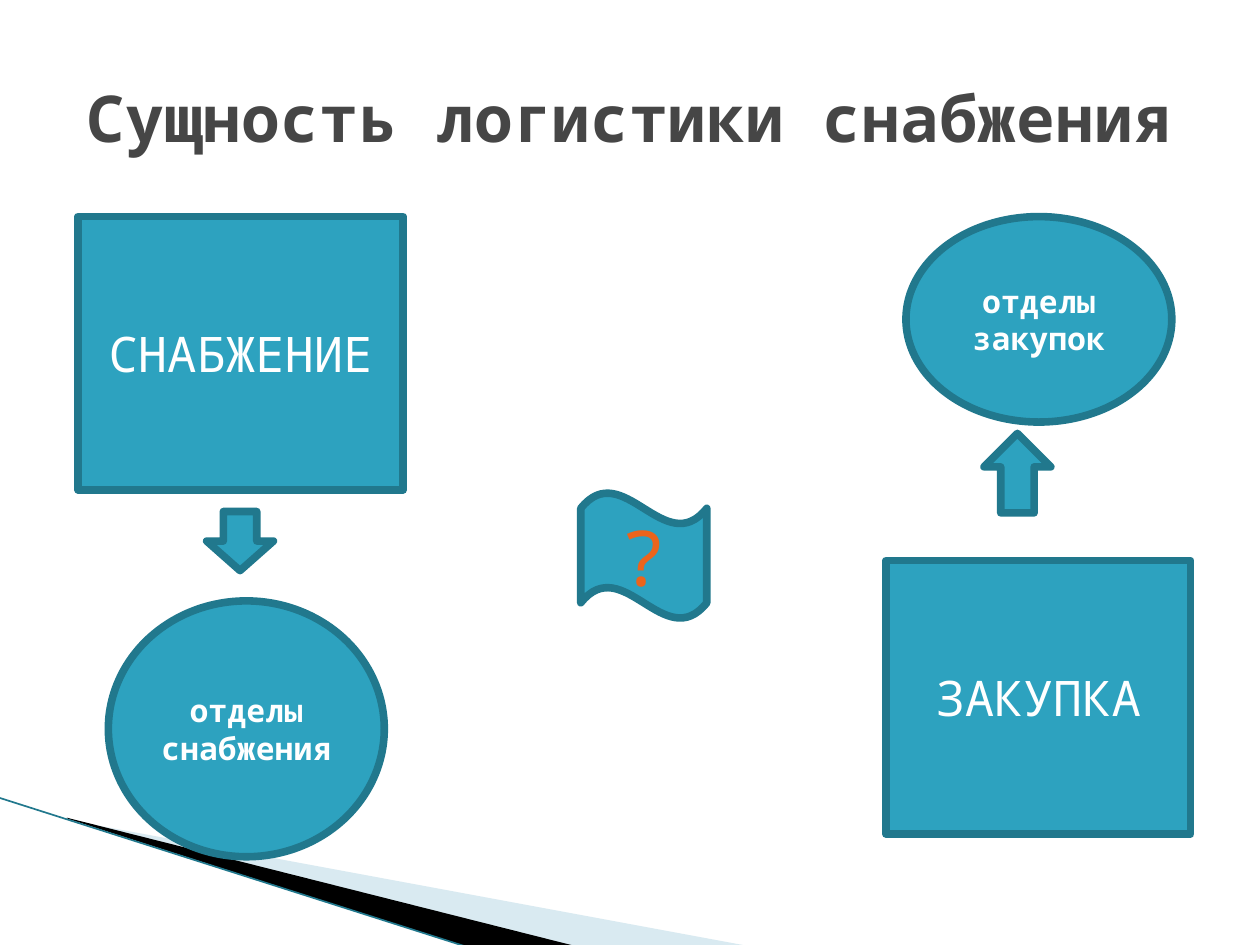
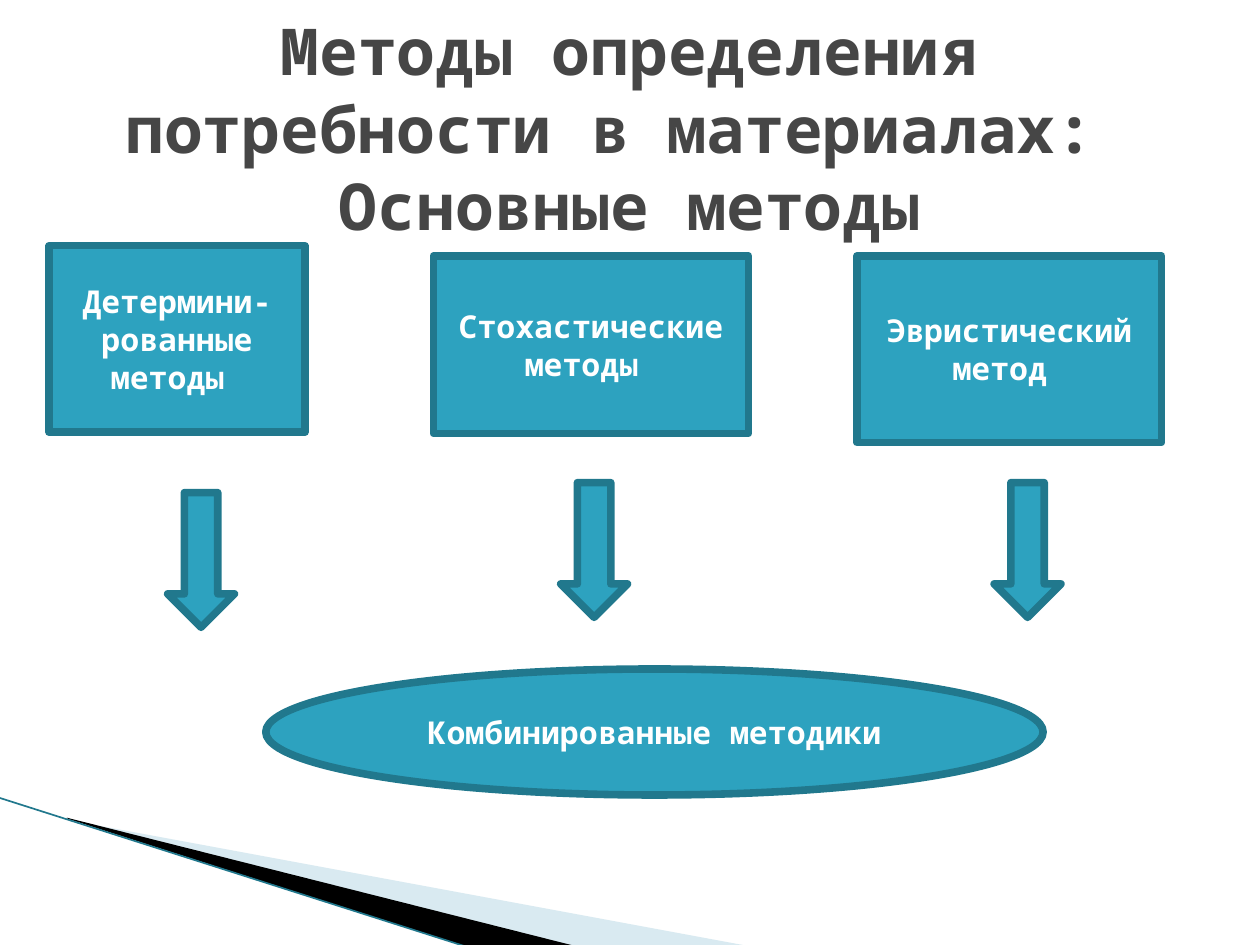
"""Build two slides on supply logistics and methods of planning material needs."""
from lxml.etree import SubElement
from pptx import Presentation
from pptx.dml.color import RGBColor
from pptx.enum.shapes import MSO_CONNECTOR, MSO_SHAPE
from pptx.enum.text import MSO_ANCHOR, PP_ALIGN
from pptx.oxml.ns import qn
from pptx.util import Pt

FONT = "Noto Sans Mono"
TEAL = RGBColor(0x2D, 0xA2, 0xBF)
DARK_TEAL = RGBColor(0x21, 0x78, 0x8D)
PALE_BLUE = RGBColor(0xA0, 0xCB, 0xDC)
BLACK = RGBColor(0, 0, 0)
WHITE = RGBColor(0xFF, 0xFF, 0xFF)
ORANGE = RGBColor(0xEB, 0x64, 0x1B)
GREY = RGBColor(0x46, 0x46, 0x46)

WEDGES = [
    (PALE_BLUE, [(39.6, 468.7), (428.4, 540.7), (328.3, 540.7), (39.6, 468)]),
    (BLACK, [(38.2, 467.3), (329, 540.7), (267.8, 541.4), (38.9, 468)]),
]


def write(shape, text, size, color, bold):
    frame = shape.text_frame
    frame.word_wrap = True
    frame.vertical_anchor = MSO_ANCHOR.MIDDLE
    frame.margin_left = frame.margin_right = Pt(6)
    frame.text = text
    paragraph = frame.paragraphs[0]
    paragraph.alignment = PP_ALIGN.CENTER
    paragraph.font.name = FONT
    paragraph.font.size = Pt(size)
    paragraph.font.bold = bold
    paragraph.font.color.rgb = color


def add_figure(slide, kind, box, text="", size=18, color=WHITE, bold=True):
    figure = slide.shapes.add_shape(kind, *map(Pt, box))
    figure.shadow.inherit = False
    figure.fill.solid()
    figure.fill.fore_color.rgb = TEAL
    figure.line.color.rgb = DARK_TEAL
    figure.line.width = Pt(4.33)
    if text:
        write(figure, text, size, color, bold)


prs = Presentation()
prs.slide_width, prs.slide_height = Pt(720), Pt(540)

titles = [
    ("Сущность логистики снабжения", (36, 21.6, 648, 90)),
    ("Методы определения потребности в материалах: \vОсновные методы", (36, 16.6, 648, 112.3)),
]
slides = []
for title, box in titles:
    slide = prs.slides.add_slide(prs.slide_layouts[6])
    slides.append(slide)
    for color, points in WEDGES:
        corners = [(Pt(x), Pt(y)) for x, y in points]
        builder = slide.shapes.build_freeform(*corners[0])
        builder.add_line_segments(corners[1:])
        wedge = builder.convert_to_shape()
        wedge.shadow.inherit = False
        wedge.fill.solid()
        wedge.fill.fore_color.rgb = color
        wedge.line.fill.background()
        if color == PALE_BLUE:
            tint = wedge.fill._xPr.find(qn("a:solidFill"))[0]
            SubElement(tint, qn("a:alpha"), val="40000")
    edge = slide.shapes.add_connector(
        MSO_CONNECTOR.STRAIGHT, Pt(-0.7), Pt(455.8), Pt(267.8), Pt(541.4))
    edge.line.color.rgb = DARK_TEAL
    edge.line.width = Pt(0.95)
    SubElement(edge._element.spPr, qn("a:effectLst"))
    write(slide.shapes.add_textbox(*map(Pt, box)), title, 36.9, GREY, True)

essence, methods = slides

add_figure(essence, MSO_SHAPE.RECTANGLE, (44.6, 123.8, 185.8, 156.2), "СНАБЖЕНИЕ", 28, bold=False)
add_figure(essence, MSO_SHAPE.RECTANGLE, (506.2, 320.4, 174.2, 156.2), "ЗАКУПКА", 28, bold=False)
add_figure(essence, MSO_SHAPE.WAVE, (331.9, 281.5, 72, 72), "?", 44, ORANGE, False)
add_figure(essence, MSO_SHAPE.DOWN_ARROW, (118.1, 292.3, 38.2, 33.8))
add_figure(essence, MSO_SHAPE.OVAL, (61.9, 343.4, 157.7, 146.2), "отделы снабжения")
add_figure(essence, MSO_SHAPE.UP_ARROW, (562.3, 247.7, 38.2, 45.4))
add_figure(essence, MSO_SHAPE.OVAL, (517.7, 123.8, 151.9, 117.4), "отделы закупок")

method_columns = [
    ("Детермини-рованные методы ", (28.1, 140.4, 146.2, 106.6), (95.8, 281.5)),
    ("Стохастические методы ", (247.7, 146.2, 180, 101.5), (320.4, 275.8)),
    ("Эвристический метод ", (489.6, 146.2, 174.2, 106.6), (568.1, 275.8)),
]
for method, box, arrow_corner in method_columns:
    add_figure(methods, MSO_SHAPE.RECTANGLE, box, method)
    add_figure(methods, MSO_SHAPE.DOWN_ARROW, (*arrow_corner, 38.2, 77))
add_figure(methods, MSO_SHAPE.OVAL, (151.9, 382.3, 444.2, 72), "Комбинированные методики")

prs.save("out.pptx")
